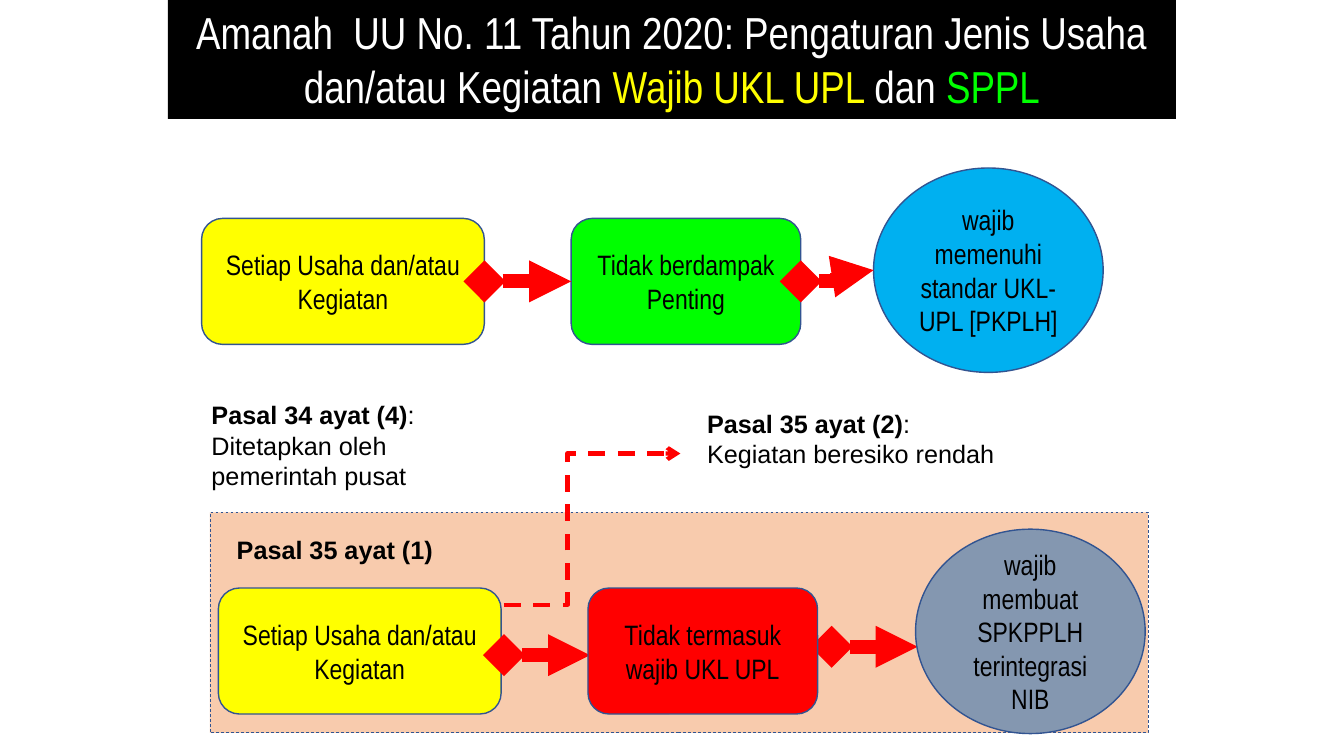
from lxml.etree import SubElement
from pptx import Presentation
from pptx.dml.color import RGBColor
from pptx.enum.dml import MSO_LINE
from pptx.enum.shapes import MSO_CONNECTOR, MSO_SHAPE
from pptx.enum.text import MSO_ANCHOR, MSO_AUTO_SIZE, PP_ALIGN
from pptx.oxml.ns import qn
from pptx.util import Pt

BLACK = RGBColor(0x00, 0x00, 0x00)
WHITE = RGBColor(0xFF, 0xFF, 0xFF)
YELLOW = RGBColor(0xFF, 0xFF, 0x00)
GREEN = RGBColor(0x00, 0xFF, 0x00)
RED = RGBColor(0xFF, 0x00, 0x00)
SKY = RGBColor(0x00, 0xB0, 0xF0)
SLATE = RGBColor(0x84, 0x97, 0xB0)
PEACH = RGBColor(0xF8, 0xCB, 0xAD)
NAVY = RGBColor(0x32, 0x54, 0x91)

RIGHT_SIDE, LEFT_SIDE = 3, 1
STEP_HEIGHT = 90
START_WIDTH, IMPACT_WIDTH = 202, 164
DUTY_SIZE = (164, 146)


class FlowSlide:
    narrow = "Arial Narrow"
    plain = "Arial"

    def __init__(self, slide):
        self.slide = slide

    def title(self, box, pieces):
        """Fill the title placeholder with (text, colour) pieces."""
        title = self.slide.shapes.title
        title.left, title.top, title.width, title.height = map(Pt, box)
        title.fill.solid()
        title.fill.fore_color.rgb = BLACK
        frame = title.text_frame
        frame.auto_size = MSO_AUTO_SIZE.NONE
        frame.word_wrap = True
        frame.vertical_anchor = MSO_ANCHOR.TOP
        paragraph = frame.paragraphs[0]
        paragraph.alignment = PP_ALIGN.CENTER
        paragraph.font.name = self.narrow
        paragraph.font.size = Pt(32)
        for text, colour in pieces:
            run = paragraph.add_run()
            run.text = text
            run.font.color.rgb = colour

    def block(self, kind, box, fill, text="", width=1):
        block = self.slide.shapes.add_shape(kind, *map(Pt, box))
        block.shadow.inherit = False
        block.fill.solid()
        block.fill.fore_color.rgb = fill
        block.line.color.rgb = NAVY
        block.line.width = Pt(width)
        if text:
            frame = block.text_frame
            frame.word_wrap = True
            frame.vertical_anchor = MSO_ANCHOR.MIDDLE
            paragraph = frame.paragraphs[0]
            paragraph.text = text
            paragraph.alignment = PP_ALIGN.CENTER
            paragraph.font.name = self.narrow
            paragraph.font.size = Pt(20)
            paragraph.font.color.rgb = BLACK
        return block

    def step(self, box, fill, text):
        return self.block(MSO_SHAPE.ROUNDED_RECTANGLE, box, fill, text)

    def duty(self, left, top, fill, text):
        return self.block(MSO_SHAPE.OVAL, (left, top, *DUTY_SIZE), fill, text)

    def region(self, box, fill):
        region = self.block(MSO_SHAPE.RECTANGLE, box, fill, width=0.5)
        region.line.dash_style = MSO_LINE.DASH

    def article(self, box, heading, rule=""):
        """Write a bold article number, with its rule on the next line."""
        article = self.slide.shapes.add_textbox(*map(Pt, box))
        frame = article.text_frame
        frame.word_wrap = True
        frame.auto_size = MSO_AUTO_SIZE.SHAPE_TO_FIT_TEXT
        number = frame.paragraphs[0].add_run()
        number.text = heading
        number.font.bold = True
        if rule:
            frame.paragraphs[0].add_run().text = ":"
            frame.add_paragraph().text = rule
        for paragraph in frame.paragraphs:
            paragraph.font.name = self.plain
            paragraph.font.size = Pt(18)
            paragraph.font.color.rgb = BLACK

    def arrow(self, start, end, width=10, head="diamond", tail="triangle",
              dash=None, bend=0.5):
        """Draw a red elbow arrow that turns at the given share of its width."""
        arrow = self.slide.shapes.add_connector(
            MSO_CONNECTOR.ELBOW, *map(Pt, (*start, *end)))
        arrow.line.color.rgb = RED
        arrow.line.width = Pt(width)
        if dash:
            arrow.line.dash_style = dash
        properties = arrow._element.spPr
        line = properties.find(qn("a:ln"))
        for tag, ending in (("a:headEnd", head), ("a:tailEnd", tail)):
            if ending:
                SubElement(line, qn(tag), type=ending)
        SubElement(properties, qn("a:effectLst"))
        guides = properties.find(qn("a:prstGeom")).find(qn("a:avLst"))
        SubElement(guides, qn("a:gd"), name="adj1",
                   fmla=f"val {round(bend * 100000)}")
        return arrow


def main():
    deck = Presentation()
    deck.slide_width, deck.slide_height = Pt(960), Pt(540)
    flow = FlowSlide(deck.slides.add_slide(deck.slide_layouts[5]))

    flow.title((120, 0, 720, 85), [
        ("Amanah  UU No. 11 Tahun 2020: Pengaturan Jenis Usaha dan/atau Kegiatan ",
         WHITE),
        ("Wajib UKL UPL ", YELLOW), ("dan ", WHITE), ("SPPL", GREEN)])

    business = "Setiap Usaha dan/atau Kegiatan"
    start = flow.step((144, 156, START_WIDTH, STEP_HEIGHT), YELLOW, business)
    impact = flow.step((408, 156, IMPACT_WIDTH, STEP_HEIGHT), GREEN,
                       "Tidak berdampak Penting")
    flow.duty(624, 120, SKY, "wajib memenuhi standar UKL-UPL [PKPLH]")
    to_impact = flow.arrow((346, 201), (408, 201))
    to_impact.begin_connect(start, RIGHT_SIDE)
    to_impact.end_connect(impact, LEFT_SIDE)
    to_standard = flow.arrow((572, 201), (624, 193))
    to_standard.begin_connect(impact, RIGHT_SIDE)
    flow.article((144, 282, 225, 73), "Pasal 34 ayat (4)",
                 "Ditetapkan oleh pemerintah pusat")

    flow.region((150, 366, 670, 157.5), PEACH)
    flow.article((162, 378, 220, 29), "Pasal 35 ayat (1)")
    flow.step((156, 420, START_WIDTH, STEP_HEIGHT), YELLOW, business)
    for left, middle in ((360, 468), (594, 462)):
        flow.arrow((left, middle), (left + 61.5, middle))
    flow.step((420, 420, IMPACT_WIDTH, STEP_HEIGHT), RED,
              "Tidak termasuk wajib UKL UPL")
    flow.duty(654, 378, SLATE, "wajib membuat SPKPPLH terintegrasi NIB")

    flow.arrow((360, 432), (486, 324), width=3, head=None, tail="arrow",
               dash=MSO_LINE.DASH, bend=0.36)
    flow.article((498, 288, 282, 51), "Pasal 35 ayat (2)",
                 "Kegiatan beresiko rendah")

    deck.save("out.pptx")


if __name__ == "__main__":
    main()
